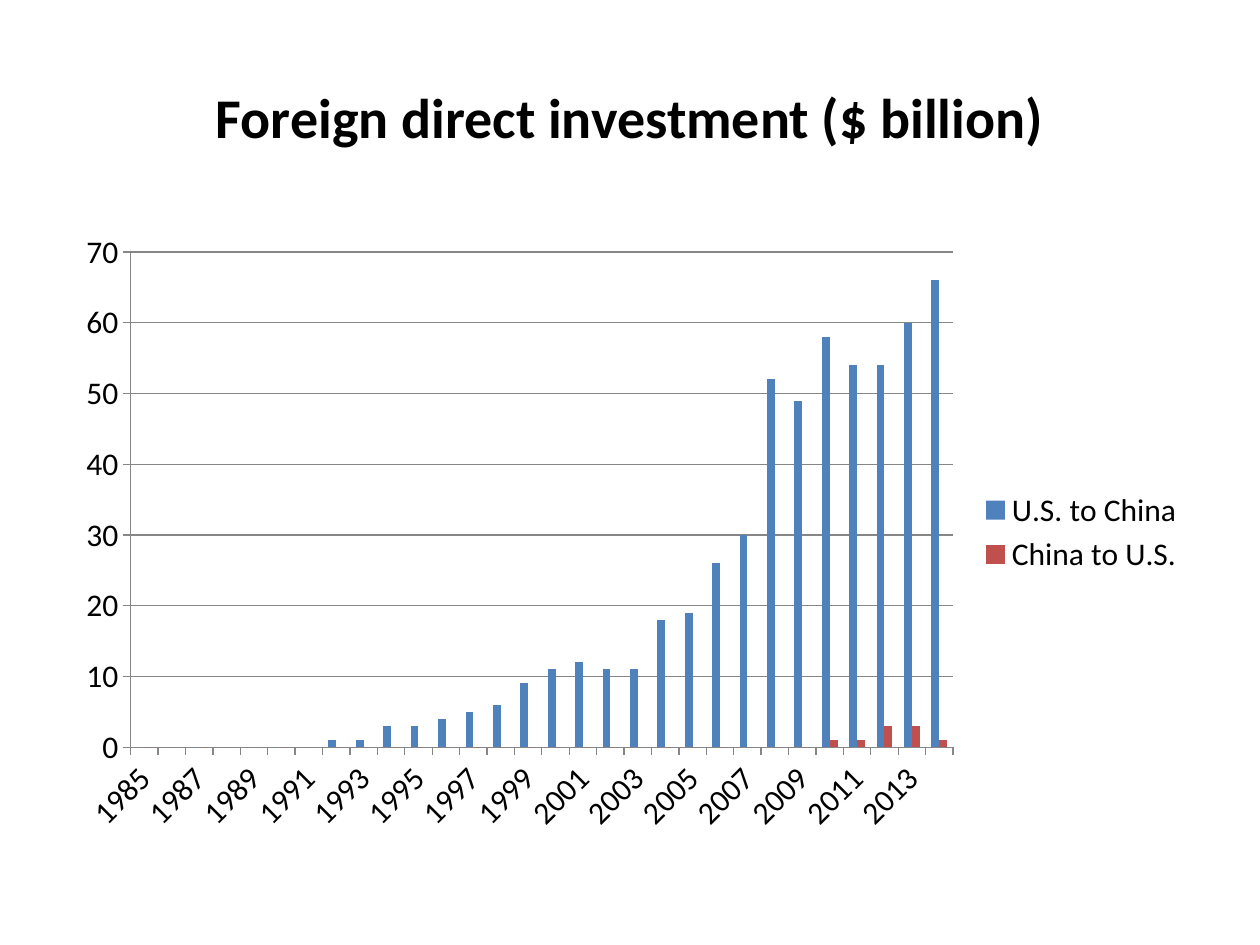
from dataclasses import dataclass

from pptx import Presentation
from pptx.chart.data import CategoryChartData
from pptx.dml.color import RGBColor
from pptx.enum.chart import XL_CHART_TYPE as ChartType
from pptx.enum.chart import XL_LEGEND_POSITION as LegendPosition
from pptx.enum.chart import XL_TICK_MARK as TickMark
from pptx.enum.text import MSO_ANCHOR as Anchor
from pptx.enum.text import PP_ALIGN as Align
from pptx.util import Inches, Pt

BLACK = RGBColor(0x00, 0x00, 0x00)
GRAY = RGBColor(0x86, 0x86, 0x86)
BLUE = RGBColor(0x4F, 0x81, 0xBD)
RED = RGBColor(0xC0, 0x50, 0x4D)
FONT = "Calibri"
LEFT, WIDTH = Inches(0.5), Inches(9)
YEARS = [str(year) for year in range(1985, 2015)]


@dataclass(frozen=True)
class Flow:
    name: str
    values: tuple[int, ...]
    color: RGBColor


FLOWS = (
    Flow("U.S. to China",
         (0, 0, 0, 0, 0, 0, 0, 1, 1, 3, 3, 4, 5, 6, 9, 11, 12, 11, 11, 18,
          19, 26, 30, 52, 49, 58, 54, 54, 60, 66), BLUE),
    Flow("China to U.S.", (0,) * 25 + (1, 1, 3, 3, 1), RED),
)


def style_font(font, *, size: int, bold: bool = False, color: RGBColor = BLACK) -> None:
    font.name = FONT
    font.size = Pt(size)
    font.bold = bold
    font.color.rgb = color


def add_text(page, text: str, *, top: float, height: float, size: int,
             bold: bool = False, align: Align = Align.CENTER) -> None:
    box = page.shapes.add_textbox(LEFT, Inches(top), WIDTH, Inches(height))
    frame = box.text_frame
    frame.word_wrap = True
    frame.vertical_anchor = Anchor.MIDDLE
    para = frame.paragraphs[0]
    para.alignment = align
    span = para.add_run()
    span.text = text
    style_font(span.font, size=size, bold=bold)


def style_line(line) -> None:
    line.color.rgb = GRAY
    line.width = Pt(0.75)


def add_flow_chart(page, flows: tuple[Flow, ...], *, top: float, height: float) -> None:
    data = CategoryChartData(number_format="General")
    data.categories = YEARS
    for flow in flows:
        data.add_series(flow.name, flow.values)
    chart = page.shapes.add_chart(ChartType.COLUMN_CLUSTERED, LEFT, Inches(top),
                                  WIDTH, Inches(height), data).chart
    style_font(chart.font, size=18)
    chart.has_title = False
    chart.has_legend = True
    chart.legend.position = LegendPosition.RIGHT
    chart.legend.include_in_layout = False

    for axis in (chart.category_axis, chart.value_axis):
        axis.major_tick_mark = TickMark.OUTSIDE
        axis.minor_tick_mark = TickMark.NONE
        style_line(axis.format.line)
    chart.value_axis.minimum_scale = 0
    chart.value_axis.maximum_scale = 70
    chart.value_axis.major_unit = 10
    chart.value_axis.has_major_gridlines = True
    style_line(chart.value_axis.major_gridlines.format.line)

    plot = chart.plots[0]
    plot.gap_width = 150
    plot.vary_by_categories = False
    for series, flow in zip(plot.series, flows):
        series.format.fill.solid()
        series.format.fill.fore_color.rgb = flow.color


def main() -> None:
    deck = Presentation()
    deck.slide_width = Inches(10)
    deck.slide_height = Inches(7.5)
    page = deck.slides.add_slide(deck.slide_layouts[6])
    add_text(page, "Foreign direct investment ($ billion)",
             top=0.3, height=1.25, size=32, bold=True)
    add_flow_chart(page, FLOWS, top=1.75, height=4.95)
    deck.save("out.pptx")


if __name__ == "__main__":
    main()
